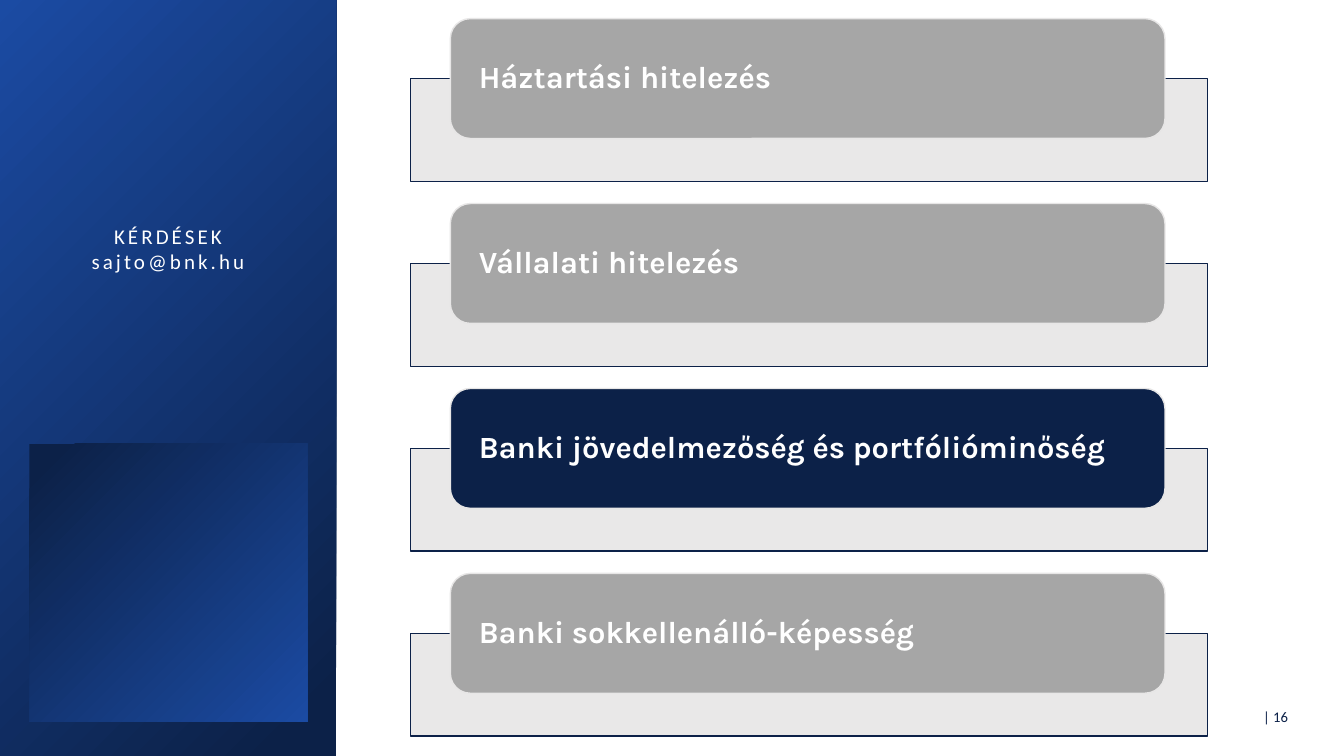
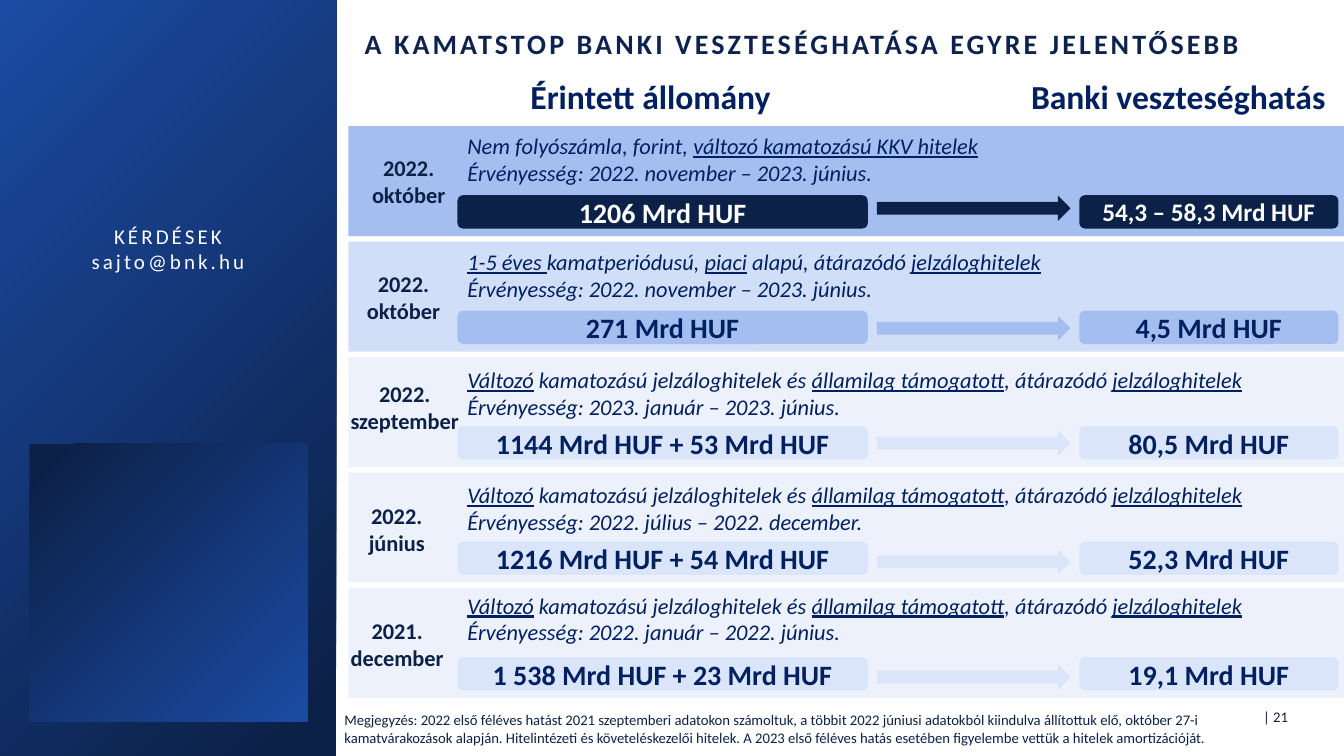
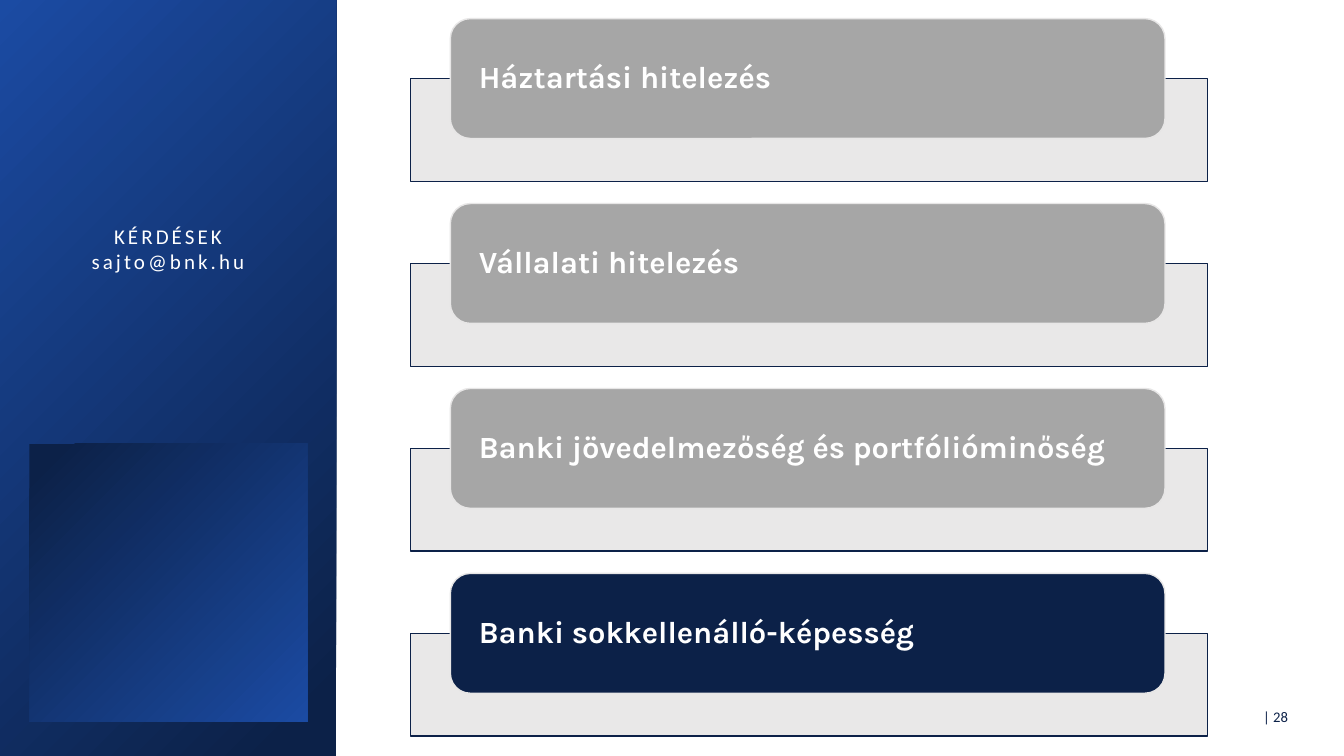
from dataclasses import dataclass

from pptx import Presentation
from pptx.dml.color import RGBColor
from pptx.enum.shapes import MSO_SHAPE
from pptx.enum.text import MSO_ANCHOR, PP_ALIGN
from pptx.oxml.ns import qn
from pptx.oxml.xmlchemy import OxmlElement
from pptx.shapes.autoshape import Shape
from pptx.slide import Slide
from pptx.util import Cm, Pt

RECTANGLE = MSO_SHAPE.RECTANGLE
ROUNDED = MSO_SHAPE.ROUNDED_RECTANGLE
ARROW = MSO_SHAPE.RIGHT_ARROW
LEFT, CENTER, RIGHT = PP_ALIGN.LEFT, PP_ALIGN.CENTER, PP_ALIGN.RIGHT
TOP, MIDDLE = MSO_ANCHOR.TOP, MSO_ANCHOR.MIDDLE

COLORS = {
    "navy": "0C2148",
    "title": "0D234D",
    "royal": "1B4BA3",
    "ink": "002060",
    "strong": "487EE1",
    "medium": "A4BEF0",
    "pale": "DAE5F9",
    "muted": "A6A6A6",
    "light": "E7E6E6",
    "white": "FFFFFF",
}
SLIDE_WIDTH, SLIDE_HEIGHT = 33.87, 19.05
INSETS = (0.25, 0.13, 0.25, 0.13)

TOPICS = (
    "Háztartási hitelezés",
    "Vállalati hitelezés",
    "Banki jövedelmezőség és portfólióminőség",
    "Banki sokkellenálló-képesség",
)
TOPIC_TOP, TOPIC_STEP = 0.47, 4.66

BAND_LEFT, BAND_TOP, BAND_STEP, BAND_HEIGHT = 8.78, 3.18, 2.91, 2.77
CONTENT_LEFT = 11.53
PILL_OFFSET, PILL_HEIGHT = 1.74, 0.84
MONTH_WIDTH = 3.4
MORTGAGES = (
    "_Változó_ kamatozású jelzáloghitelek és "
    "_államilag támogatott_, átárazódó _jelzáloghitelek_"
)


@dataclass(frozen=True)
class Measure:
    year: str
    month: str
    loans: str
    validity: str
    volume: str
    loss: str
    month_center: float
    month_offset: float
    detail_offset: float
    arrow_offset: float
    band: str = "pale"
    pill: str = "pale"
    pill_text: str = "ink"
    loss_size: float = 20


MEASURES = (
    Measure("2022.", "október", "Nem folyószámla, forint, _változó kamatozású KKV hitelek_",
            "2022. november – 2023. június.", "1206 Mrd HUF", "54,3 – 58,3 Mrd HUF",
            10.3, 0.58, 0.02, 1.75, "strong", "navy", "white", 18),
    Measure("2022.", "október",
            "_1-5 éves _kamatperiódusú, _piaci_ alapú, átárazódó _jelzáloghitelek_",
            "2022. november – 2023. június.", "271 Mrd HUF", "4,5 Mrd HUF",
            10.17, 0.59, 0.03, 1.86, "medium", "medium"),
    Measure("2022.", "szeptember", MORTGAGES, "2023. január – 2023. június.",
            "1144 Mrd HUF + 53 Mrd HUF", "80,5 Mrd HUF", 10.2, 0.45, 0.09, 1.85),
    Measure("2022.", "június", MORTGAGES, "2022. július – 2022. december.",
            "1216 Mrd HUF + 54 Mrd HUF", "52,3 Mrd HUF", 10.0, 0.61, 0.08, 1.93),
    Measure("2021.", "december", MORTGAGES, "2022. január – 2022. június.",
            "1 538 Mrd HUF + 23 Mrd HUF", "19,1 Mrd HUF", 10.01, 0.6, -0.04, 1.92),
)


def color(name: str) -> RGBColor:
    return RGBColor.from_string(COLORS[name])


def add_box(page: Slide, kind: MSO_SHAPE, left: float, top: float, width: float,
            height: float, *, fill: str, line: str | None = None,
            opacity: int = 100) -> Shape:
    box = page.shapes.add_shape(kind, Cm(left), Cm(top), Cm(width), Cm(height))
    box.shadow.inherit = False
    box.fill.solid()
    box.fill.fore_color.rgb = color(fill)
    if opacity < 100:
        alpha = OxmlElement("a:alpha")
        alpha.set("val", str(opacity * 1000))
        box._element.spPr.find(qn("a:solidFill")).find(qn("a:srgbClr")).append(alpha)
    if line:
        box.line.color.rgb = color(line)
        box.line.width = Pt(1)
    else:
        box.line.fill.background()
    return box


def write(box: Shape, text: str, *, size: float, ink: str, font: str = "Calibri",
          bold: bool = False, italic: bool = False, align: PP_ALIGN = LEFT,
          anchor: MSO_ANCHOR = TOP, tracking: float = 0, line_spacing: float = 1,
          insets: tuple[float, float, float, float] = INSETS) -> None:
    frame = box.text_frame
    frame.word_wrap = True
    frame.vertical_anchor = anchor
    (frame.margin_left, frame.margin_top,
     frame.margin_right, frame.margin_bottom) = map(Cm, insets)
    for row, line in enumerate(text.split("\n")):
        para = frame.add_paragraph() if row else frame.paragraphs[0]
        para.alignment = align
        para.line_spacing = line_spacing
        for part, words in enumerate(line.split("_")):
            if not words:
                continue
            span = para.add_run()
            span.text = words
            span.font.name = font
            span.font.size = Pt(size)
            span.font.bold = bold
            span.font.italic = italic
            span.font.underline = part % 2 == 1
            span.font.color.rgb = color(ink)
            if tracking:
                span._r.get_or_add_rPr().set("spc", str(round(tracking * 100)))


def add_text(page: Slide, left: float, top: float, width: float, height: float,
             text: str, **style) -> None:
    box = page.shapes.add_textbox(Cm(left), Cm(top), Cm(width), Cm(height))
    write(box, text, **style)


def add_gradient_box(page: Slide, left: float, top: float, width: float,
                     height: float, rotation: float = 0) -> None:
    box = add_box(page, RECTANGLE, left, top, width, height, fill="navy")
    box.rotation = rotation
    box.fill.gradient()
    box.fill.gradient_angle = 135
    for stop, name, position in zip(box.fill.gradient_stops, ("navy", "royal"), (0.06, 1)):
        stop.color.rgb = color(name)
        stop.position = position


def add_page(deck: Presentation, number: int) -> Slide:
    page = deck.slides.add_slide(deck.slide_layouts[6])
    add_gradient_box(page, 0, 0, 8.47, SLIDE_HEIGHT)
    add_gradient_box(page, 0.74, 11.18, 7.01, 7.01, rotation=180)
    add_text(page, 1.02, 5.51, 6.43, 1.55, "KÉRDÉSEK\nsajto@bnk.hu",
             size=15, ink="white", align=CENTER, tracking=2.2)
    add_text(page, 30.96, 17.53, 1.75, 1.04, f"| {number}",
             size=10.5, ink="navy", align=RIGHT, anchor=MIDDLE)
    return page


def build_agenda(deck: Presentation, number: int, current: int) -> None:
    page = add_page(deck, number)
    for index, topic in enumerate(TOPICS):
        top = TOPIC_TOP + index * TOPIC_STEP
        add_box(page, RECTANGLE, 10.34, top + 1.51, 20.09, 2.59,
                fill="light", line="navy", opacity=90)
        card = add_box(page, ROUNDED, 11.35, top, 18.01, 3.02,
                       fill="navy" if index == current else "muted", line="light")
        write(card, topic, size=22, ink="white", font="Karla", bold=True,
              anchor=MIDDLE, line_spacing=0.9, insets=(0.57, 0, 0.57, 0))


def add_measure(page: Slide, measure: Measure, top: float) -> None:
    add_box(page, RECTANGLE, BAND_LEFT, top, SLIDE_WIDTH - BAND_LEFT, BAND_HEIGHT,
            fill=measure.band, opacity=50)
    add_text(page, measure.month_center - MONTH_WIDTH / 2, top + measure.month_offset,
             MONTH_WIDTH, 1.63, f"{measure.year}\n{measure.month}",
             size=16, ink="navy", bold=True, align=CENTER)
    add_text(page, CONTENT_LEFT, top + measure.detail_offset, 22.2, 1.63,
             f"{measure.loans}\nÉrvényesség: {measure.validity}",
             size=16, ink="ink", italic=True)
    for left, width, amount, size in (
        (CONTENT_LEFT, 10.34, measure.volume, 20),
        (27.2, 6.53, measure.loss, measure.loss_size),
    ):
        pill = add_box(page, ROUNDED, left, top + PILL_OFFSET, width, PILL_HEIGHT,
                       fill=measure.pill)
        write(pill, amount, size=size, ink=measure.pill_text, bold=True,
              align=CENTER, anchor=MIDDLE)
    add_box(page, ARROW, 22.1, top + measure.arrow_offset, 4.88, 0.64, fill=measure.pill)


def build_losses(deck: Presentation, number: int) -> None:
    page = add_page(deck, number)
    add_text(page, 8.99, 0.43, 23.7, 1.42,
             "A KAMATSTOP BANKI VESZTESÉGHATÁSA EGYRE JELENTŐSEBB",
             size=20, ink="title", bold=True, anchor=MIDDLE, tracking=2.2,
             line_spacing=0.9, insets=(0.2, 0.1, 0.2, 0.1))
    for left, top, width, height, heading in (
        (12.8, 1.7, 7.19, 1.42, "Érintett állomány"),
        (25.52, 1.83, 8.35, 1.19, "Banki veszteséghatás"),
    ):
        add_text(page, left, top, width, height, heading, size=24, ink="ink",
                 bold=True, align=CENTER, anchor=MIDDLE)
    for index, measure in enumerate(MEASURES):
        add_measure(page, measure, BAND_TOP + index * BAND_STEP)
    add_text(page, 8.43, 17.78, 24.79, 1.14,
             "Megjegyzés: 2022 első féléves hatást 2021 szeptemberi adatokon számoltuk, "
             "a többit 2022 júniusi adatokból kiindulva állítottuk elő, október 27-i "
             "kamatvárakozások alapján. Hitelintézeti és követeléskezelői hitelek. "
             "A 2023 első féléves hatás esetében figyelembe vettük a hitelek "
             "amortizációját.",
             size=10.5, ink="navy")


def main() -> None:
    deck = Presentation()
    deck.slide_width, deck.slide_height = Cm(SLIDE_WIDTH), Cm(SLIDE_HEIGHT)
    build_agenda(deck, number=16, current=2)
    build_losses(deck, number=21)
    build_agenda(deck, number=28, current=3)
    deck.save("out.pptx")


if __name__ == "__main__":
    main()
